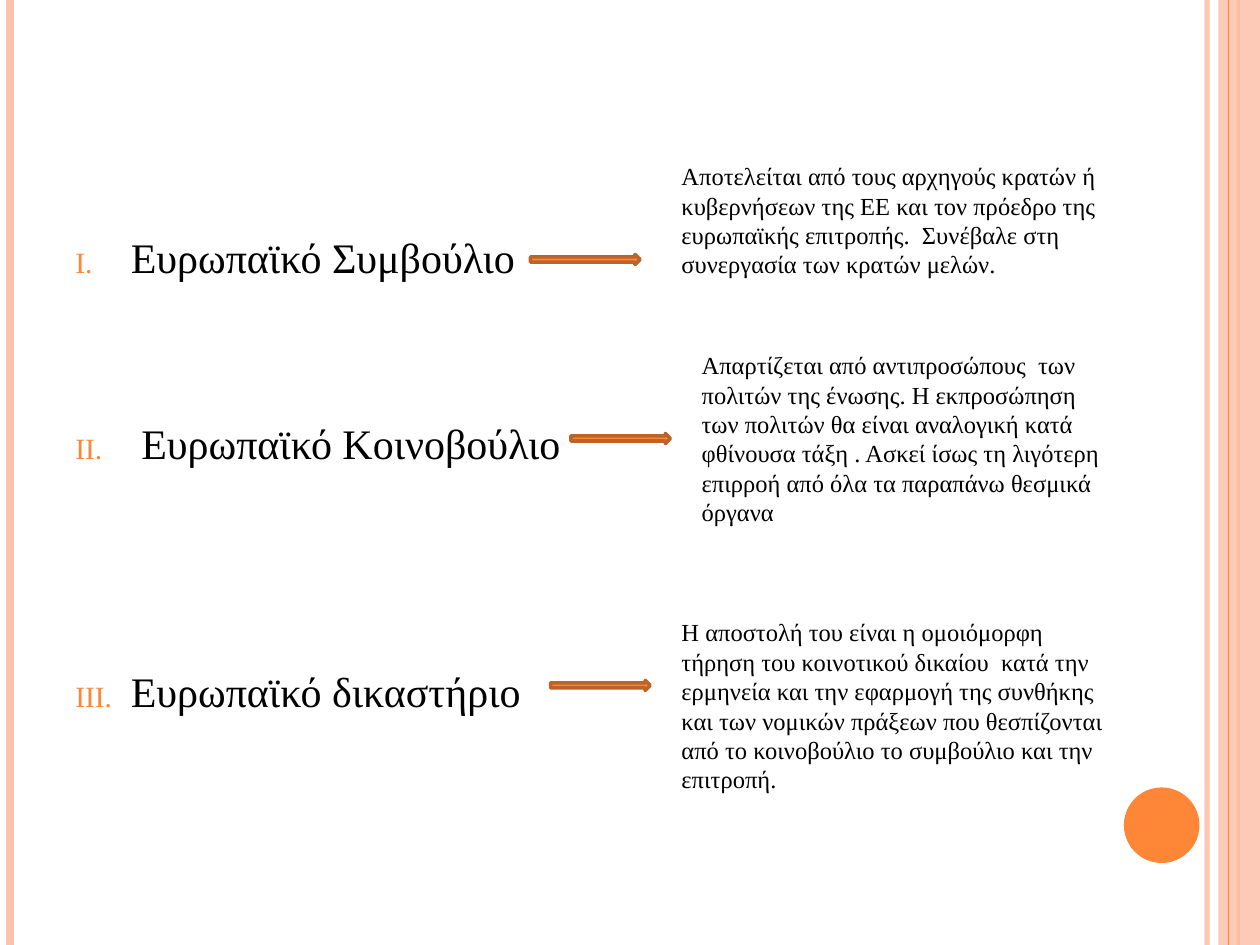
import dataclasses

import lxml.etree
import pptx
import pptx.dml.color
import pptx.enum.shapes
import pptx.oxml.ns
import pptx.util

WIDE = pptx.util.Inches(10)
HIGH = pptx.util.Inches(7.5)
ORANGE, PEACH, BROWN, BLACK = "FE8637", "FEC3AE", "BC6329", "000000"
FONT = "Times New Roman"
KINDS = pptx.enum.shapes.MSO_SHAPE


@dataclasses.dataclass
class Box:
    left: float
    top: float
    width: float
    height: float

    def place(self) -> tuple[int, int, int, int]:
        return (part(self.left, WIDE), part(self.top, HIGH),
                part(self.width, WIDE), part(self.height, HIGH))


@dataclasses.dataclass
class Stripe:
    left: float
    color: str
    width: float
    alpha: int = 100


@dataclasses.dataclass
class Body:
    name: str
    gap: float
    arrow: Box
    note: str
    frame: Box


def part(share: float, whole: int) -> int:
    return round(whole * share / 100)


def paint(target, color: str, alpha: int = 100) -> None:
    target.solid()
    target.fore_color.rgb = pptx.dml.color.RGBColor.from_string(color)
    if alpha < 100:
        tone = target.fore_color._xFill[0]
        add_tag(tone, "a:alpha", val=str(alpha * 1000))


def add_tag(parent, tag: str, **attrs: str):
    return lxml.etree.SubElement(parent, pptx.oxml.ns.qn(tag), **attrs)


def draw_stripe(slide, stripe: Stripe) -> None:
    left = part(stripe.left, WIDE)
    line = slide.shapes.add_connector(
        pptx.enum.shapes.MSO_CONNECTOR.STRAIGHT, left, 0, left, HIGH)
    paint(line.line.fill, stripe.color, stripe.alpha)
    line.line.width = pptx.util.Pt(stripe.width)
    add_tag(line._element.spPr, "a:effectLst")


def draw_shape(slide, kind, box: Box, color: str, alpha: int = 100,
               edge: str = "") -> None:
    shape = slide.shapes.add_shape(kind, *box.place())
    shape.shadow.inherit = False
    paint(shape.fill, color, alpha)
    if edge:
        paint(shape.line.fill, edge)
        shape.line.width = pptx.util.Pt(2)
    else:
        shape.line.fill.background()


def add_number(para) -> None:
    props = para._p.get_or_add_pPr()
    indent = pptx.util.Inches(0.44)
    props.set("marL", str(indent))
    props.set("indent", str(-indent))
    add_tag(add_tag(props, "a:buClr"), "a:srgbClr", val=ORANGE)
    add_tag(props, "a:buSzPct", val="70000")
    add_tag(props, "a:buFont", typeface=FONT)
    add_tag(props, "a:buAutoNum", type="romanUcPeriod")


def write(slide, box: Box, texts: list[str], *, size: float,
          gaps: list[float] | None = None, number: bool = False) -> None:
    frame = slide.shapes.add_textbox(*box.place()).text_frame
    frame.word_wrap = True
    for index, text in enumerate(texts):
        para = frame.paragraphs[0] if index == 0 else frame.add_paragraph()
        if number:
            add_number(para)
        if gaps and gaps[index]:
            para.space_before = pptx.util.Pt(gaps[index])
        run = para.add_run()
        run.text = text
        run.font.name = FONT
        run.font.size = pptx.util.Pt(size)
        run.font.color.rgb = pptx.dml.color.RGBColor.from_string(BLACK)


BODIES = [
    Body("Ευρωπαϊκό Συμβούλιο", 0, Box(42.1, 26.93, 8.7, 1.07),
         "Αποτελείται από τους αρχηγούς κρατών ή κυβερνήσεων της ΕΕ και τον "
         "πρόεδρο της ευρωπαϊκής επιτροπής.  Συνέβαλε στη συνεργασία των "
         "κρατών μελών.", Box(53.1, 16.4, 40.2, 13.87)),
    Body(" Ευρωπαϊκό Κοινοβούλιο", 77.5, Box(45.3, 45.87, 7.9, 1.07),
         "Απαρτίζεται από αντιπροσώπους  των πολιτών της ένωσης. Η "
         "εκπροσώπηση των πολιτών θα είναι αναλογική κατά φθίνουσα τάξη . "
         "Ασκεί ίσως τη λιγότερη επιρροή από όλα τα παραπάνω θεσμικά όργανα",
         Box(54.7, 36.4, 33.9, 20.13)),
    Body("Ευρωπαϊκό δικαστήριο", 112.5, Box(43.7, 72, 7.9, 1.07),
         "Η αποστολή του είναι η ομοιόμορφη τήρηση του κοινοτικού δικαίου  "
         "κατά την ερμηνεία και την εφαρμογή της συνθήκης και των νομικών "
         "πράξεων που θεσπίζονται από το κοινοβούλιο το συμβούλιο και την "
         "επιτροπή.", Box(53.1, 64.67, 36.2, 20.13)),
]


def main() -> None:
    deck = pptx.Presentation()
    deck.slide_width, deck.slide_height = WIDE, HIGH
    slide = deck.slides.add_slide(deck.slide_layouts[6])
    for stripe in (Stripe(95.8, PEACH, 3, 93), Stripe(0.8, PEACH, 4.5),
                   Stripe(98.3, ORANGE, 1.5)):
        draw_stripe(slide, stripe)
    draw_shape(slide, KINDS.RECTANGLE, Box(96.7, 0, 3.3, 100), PEACH, 87)
    draw_stripe(slide, Stripe(97.5, ORANGE, 0.75))
    draw_shape(slide, KINDS.OVAL, Box(89.2, 83.33, 6, 8), ORANGE)
    write(slide, Box(5, 23.87, 81.7, 71.07), [body.name for body in BODIES],
          size=24, gaps=[body.gap for body in BODIES], number=True)
    for body in BODIES:
        draw_shape(slide, KINDS.RIGHT_ARROW, body.arrow, ORANGE, edge=BROWN)
        write(slide, body.frame, [body.note], size=14)
    deck.save("out.pptx")


if __name__ == "__main__":
    main()
